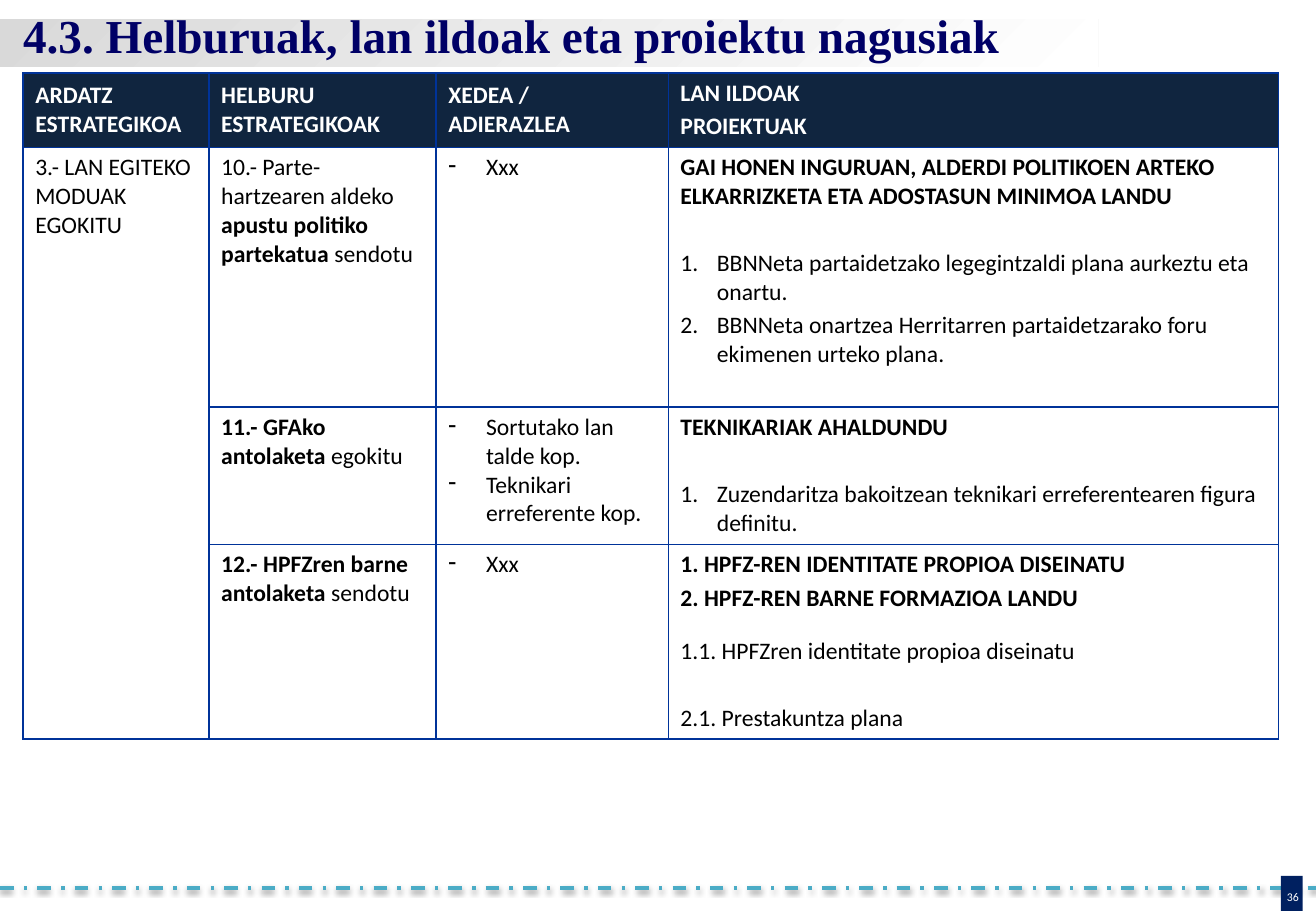
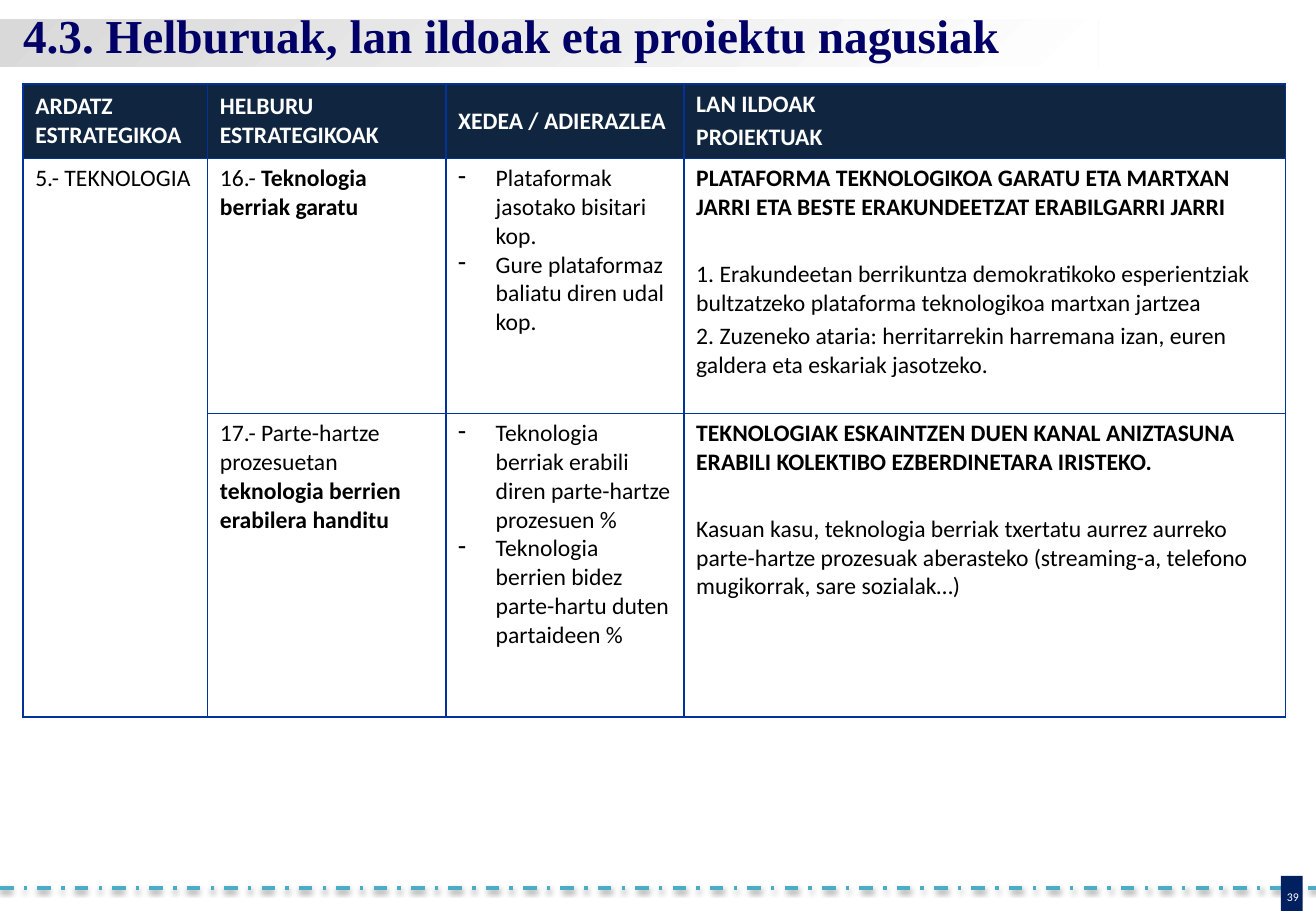
import pptx
import pptx.dml.color
import pptx.enum.dml
import pptx.enum.shapes
import pptx.enum.text
import pptx.oxml
import pptx.oxml.ns
import pptx.util

NAMESPACE = pptx.oxml.ns.nsdecls("a")
UNIT = pptx.util.Inches(0.01)  # one column or row of the layout grid
COLUMNS, ROWS = 1083, 750
MARGIN = 19
NAVY, WHITE, BLACK, BORDER = "10253F", "FFFFFF", "000000", "003399"
ANCHOR = pptx.enum.text.MSO_ANCHOR
ALIGN = pptx.enum.text.PP_ALIGN

# Paragraph kinds: space before in points, hanging indent in grid columns, bullet
DASH = '<a:buChar %s char="-"/>' % NAMESPACE
NUMBER = '<a:buAutoNum %s type="arabicPeriod"/>' % NAMESPACE
KINDS = {
    "plain": (0, 0, None),
    "dash": (0, 31, DASH),
    "line": (2.8, 0, None),
    "half gap": (14.3, 0, None),
    "gap": (22.6, 0, None),
    "number": (2.8, 30, NUMBER),
    "gap number": (22.6, 30, NUMBER),
}

# Content: cells are lists of (kind, text), ** switches bold, None is merged upwards
TITLE = "4.3. Helburuak, lan ildoak eta proiektu nagusiak"
HEADER = [
    [("plain", "**ARDATZ ESTRATEGIKOA**")],
    [("plain", "**HELBURU ESTRATEGIKOAK**")],
    [("plain", "**XEDEA / ADIERAZLEA**")],
    [("plain", "**LAN ILDOAK**"), ("line", "**PROIEKTUAK**")],
]
PAGES = [
    {
        "number": "36", "top": 60,
        "widths": [153, 187, 191, 502], "heights": [61, 214, 113, 160],
        "body": [
            [
                [("plain", "3.- LAN EGITEKO MODUAK EGOKITU")],
                [("plain", "10.- Parte-hartzearen aldeko **apustu politiko partekatua** sendotu")],
                [("dash", "Xxx")],
                [("plain", "**GAI HONEN INGURUAN, ALDERDI POLITIKOEN ARTEKO ELKARRIZKETA "
                           "ETA ADOSTASUN MINIMOA LANDU**"),
                 ("gap number", "BBNNeta partaidetzako legegintzaldi plana aurkeztu eta onartu."),
                 ("number", "BBNNeta onartzea Herritarren partaidetzarako foru ekimenen "
                            "urteko plana.")],
            ],
            [
                None,
                [("plain", "**11.- GFAko antolaketa **egokitu")],
                [("dash", "Sortutako lan talde kop."), ("dash", "Teknikari erreferente kop.")],
                [("plain", "**TEKNIKARIAK AHALDUNDU**"),
                 ("gap number", "Zuzendaritza bakoitzean teknikari erreferentearen figura "
                                "definitu.")],
            ],
            [
                None,
                [("plain", "**12.- HPFZren barne antolaketa **sendotu")],
                [("dash", "Xxx")],
                [("plain", "**1. HPFZ-REN IDENTITATE PROPIOA DISEINATU**"),
                 ("line", "**2. HPFZ-REN BARNE FORMAZIOA LANDU**"),
                 ("half gap", "1.1. HPFZren identitate propioa diseinatu"),
                 ("gap", "2.1. Prestakuntza plana")],
            ],
        ],
    },
    {
        "number": "39", "top": 69,
        "widths": [152, 196, 196, 495], "heights": [61, 210, 250],
        "body": [
            [
                [("plain", "5.- TEKNOLOGIA")],
                [("plain", "16.- **Teknologia berriak garatu**")],
                [("dash", "Plataformak jasotako bisitari kop."),
                 ("dash", "Gure plataformaz baliatu diren udal kop.")],
                [("plain", "**PLATAFORMA TEKNOLOGIKOA GARATU ETA MARTXAN JARRI ETA BESTE "
                           "ERAKUNDEETZAT ERABILGARRI JARRI**"),
                 ("gap", "1. Erakundeetan berrikuntza demokratikoko esperientziak bultzatzeko "
                         "plataforma teknologikoa martxan jartzea"),
                 ("line", "2. Zuzeneko ataria: herritarrekin harremana izan, euren galdera eta "
                          "eskariak jasotzeko.")],
            ],
            [
                None,
                [("plain", "17.- Parte-hartze prozesuetan **teknologia berrien erabilera handitu**")],
                [("dash", "Teknologia berriak erabili diren parte-hartze prozesuen %"),
                 ("dash", "Teknologia berrien bidez parte-hartu duten partaideen %")],
                [("plain", "**TEKNOLOGIAK ESKAINTZEN DUEN KANAL ANIZTASUNA ERABILI KOLEKTIBO "
                           "EZBERDINETARA IRISTEKO.**"),
                 ("gap", "Kasuan kasu, teknologia berriak txertatu aurrez aurreko parte-hartze "
                         "prozesuak aberasteko (streaming-a, telefono mugikorrak, sare "
                         "sozialak…)")],
            ],
        ],
    },
]


def color(hex_text):
    return pptx.dml.color.RGBColor.from_string(hex_text)


def write(paragraph, text, size, hex_text, font="Calibri"):
    """Adds runs to a paragraph; parts between ** are bold."""
    for index, part in enumerate(text.split("**")):
        if part:
            run = paragraph.add_run()
            run.text = part
            run.font.color.rgb = color(hex_text)
            values = {"name": font, "size": pptx.util.Pt(size), "bold": index % 2 == 1}
            for name, value in values.items():
                setattr(run.font, name, value)


presentation = pptx.Presentation()
presentation.slide_width, presentation.slide_height = COLUMNS * UNIT, ROWS * UNIT
layout = presentation.slide_layouts[5]
slides = [presentation.slides.add_slide(layout) for page in PAGES]

# Shared decoration: dashed footer line, number block, title band
shapes = slides[0].shapes
footer_line = shapes.add_connector(
    pptx.enum.shapes.MSO_CONNECTOR.STRAIGHT, 0, 731 * UNIT, COLUMNS * UNIT, 731 * UNIT)
footer_line.line.color.rgb = color("4BACC6")
footer_line.line.width = pptx.util.Pt(2)
footer_line.line.dash_style = pptx.enum.dml.MSO_LINE.DASH_DOT
footer_line.element.spPr.append(pptx.oxml.parse_xml(
    '<a:effectLst %s><a:outerShdw blurRad="40000" dist="20000" dir="5400000" rotWithShape="0">'
    '<a:srgbClr val="000000"><a:alpha val="38000"/></a:srgbClr></a:outerShdw></a:effectLst>'
    % NAMESPACE))

number_block, title_band = [
    shapes.add_shape(pptx.enum.shapes.MSO_SHAPE.RECTANGLE, *[value * UNIT for value in box])
    for box in ((1054, 721, 18, 29), (0, 16, 904, 39))]
for shape in (number_block, title_band):
    shape.shadow.inherit = False
    shape.line.fill.background()
    shape.fill.solid()
    shape.fill.fore_color.rgb = color("002060")
band_fill = title_band.element.spPr.find(pptx.oxml.ns.qn("a:solidFill"))
band_fill.getparent().replace(band_fill, pptx.oxml.parse_xml(
    '<a:gradFill %s rotWithShape="1"><a:gsLst><a:gs pos="0"><a:srgbClr val="FFFFFF"/></a:gs>'
    '<a:gs pos="100000"><a:srgbClr val="D9D9D9"/></a:gs></a:gsLst>'
    '<a:path path="circle"><a:fillToRect l="100000" t="100000"/></a:path></a:gradFill>'
    % NAMESPACE))

# The decoration belongs to the layout, so that every slide shows it
for identifier, shape in enumerate((footer_line, number_block, title_band), 101):
    shape.element.xpath(".//p:cNvPr")[0].set("id", str(identifier))
    layout.shapes.element.append(shape.element)

for slide, page in zip(slides, PAGES):
    # Title and slide number
    number_box = slide.shapes.add_textbox(0, 0, UNIT, UNIT)
    for shape, box, margins, alignment in (
            (slide.shapes.title, (0, 6, COLUMNS, 50), (MARGIN, 4, 4, 4), ALIGN.LEFT),
            (number_box, (1045, 721, 38, 23), (0, 0, 0, 0), ALIGN.CENTER)):
        for name, value in zip(("left", "top", "width", "height"), box):
            setattr(shape, name, value * UNIT)
        frame = shape.text_frame
        for name, value in zip(("left", "top", "right", "bottom"), margins):
            setattr(frame, "margin_" + name, value * UNIT)
        values = {"word_wrap": True, "vertical_anchor": ANCHOR.BOTTOM,
                  "auto_size": pptx.enum.text.MSO_AUTO_SIZE.NONE}
        for name, value in values.items():
            setattr(frame, name, value)
        frame.paragraphs[0].alignment = alignment
    write(slide.shapes.title.text_frame.paragraphs[0], "**" + TITLE + "**", 28,
          "000066", "Times New Roman")
    write(number_box.text_frame.paragraphs[0], page["number"], 7, WHITE)

    # Table grid
    rows = [HEADER] + page["body"]
    table = slide.shapes.add_table(
        len(rows), len(HEADER), MARGIN * UNIT, page["top"] * UNIT,
        sum(page["widths"]) * UNIT, sum(page["heights"]) * UNIT).table
    table.horz_banding = False
    for column, width in zip(table.columns, page["widths"]):
        column.width = width * UNIT
    for row, height in zip(table.rows, page["heights"]):
        row.height = height * UNIT
    table.cell(1, 0).merge(table.cell(len(rows) - 1, 0))

    # Table cells
    for row_index, row in enumerate(rows):
        is_header = row_index == 0
        for column_index, content in enumerate(row):
            cell = table.cell(row_index, column_index)
            properties = cell._tc.get_or_add_tcPr()
            for side in "LRTB":
                properties.append(pptx.oxml.parse_xml(
                    '<a:ln%s %s w="12700"><a:solidFill><a:srgbClr val="%s"/></a:solidFill></a:ln%s>'
                    % (side, NAMESPACE, BORDER, side)))
            if is_header:
                cell.fill.solid()
                cell.fill.fore_color.rgb = color(NAVY)
            else:
                cell.fill.background()
            cell.vertical_anchor = ANCHOR.MIDDLE if is_header else ANCHOR.TOP
            for index, (kind, text) in enumerate(content or []):
                frame = cell.text_frame
                paragraph = frame.add_paragraph() if index else frame.paragraphs[0]
                space, indent, bullet = KINDS[kind]
                if bullet:
                    paragraph_properties = paragraph._p.get_or_add_pPr()
                    paragraph_properties.set("marL", str(indent * UNIT))
                    paragraph_properties.set("indent", str(-indent * UNIT))
                    paragraph_properties.append(pptx.oxml.parse_xml(bullet))
                paragraph.space_before = pptx.util.Pt(space)
                write(paragraph, text, 14, WHITE if is_header else BLACK)

presentation.save("out.pptx")
